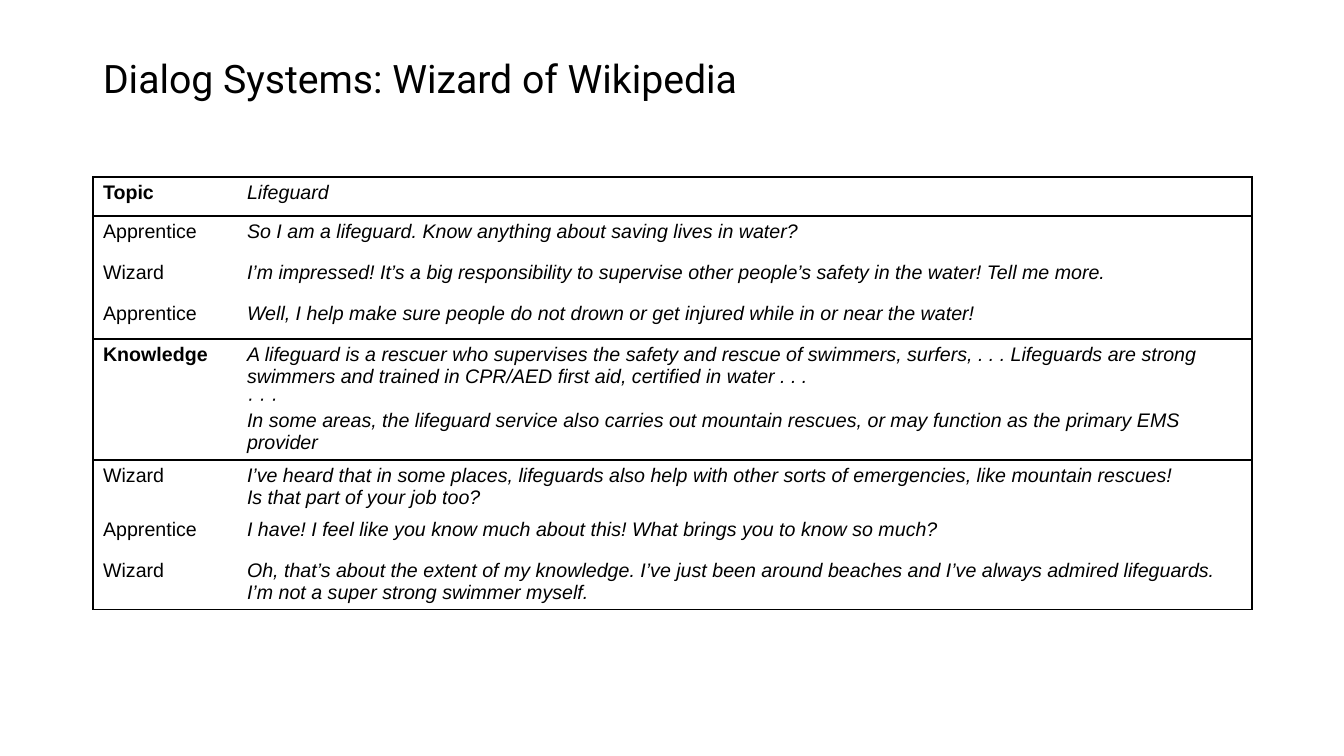
"""Build the Wizard of Wikipedia dialog slide."""
from lxml.etree import SubElement
from pptx import Presentation
from pptx.dml.color import RGBColor
from pptx.enum.text import MSO_ANCHOR, MSO_AUTO_SIZE, PP_ALIGN
from pptx.oxml.ns import qn
from pptx.util import Emu, Pt

INK = "000000"
SECTIONS = [
    [("Topic", ["Lifeguard"], 39)],
    [
        ("Apprentice", ["So I am a lifeguard. Know anything about saving lives in water?"], 41),
        ("Wizard", ["I’m impressed! It’s a big responsibility to supervise other people’s "
                    "safety in the water! Tell me more."], 41),
        ("Apprentice", ["Well, I help make sure people do not drown or get injured while "
                        "in or near the water!"], 41),
    ],
    [("Knowledge", [
        "A lifeguard is a rescuer who supervises the safety and rescue of swimmers, surfers, . . . "
        "Lifeguards are strong swimmers and trained in CPR/AED first aid, certified in water . . .",
        "· · ·",
        "In some areas, the lifeguard service also carries out mountain rescues, "
        "or may function as the primary EMS provider",
    ], 121)],
    [
        ("Wizard", ["I’ve heard that in some places, lifeguards also help with other sorts "
                    "of emergencies, like mountain rescues!",
                    "Is that part of your job too?"], 54),
        ("Apprentice", ["I have! I feel like you know much about this! "
                        "What brings you to know so much?"], 41),
        ("Wizard", ["Oh, that’s about the extent of my knowledge. I’ve just been around beaches "
                    "and I’ve always admired lifeguards. I’m not a super strong swimmer myself."], 54),
    ],
]


def px(length):
    return Emu(round(length * 914400 / 100.8))


def add_span(para, text, font_name, size, bold=False, italic=False):
    span = para.add_run()
    span.text = text
    span.font.name = font_name
    span.font.size = Pt(size)
    span.font.bold = bold
    span.font.italic = italic
    span.font.color.rgb = RGBColor.from_string(INK)


deck = Presentation()
deck.slide_width, deck.slide_height = px(1344), px(756)
page = deck.slides.add_slide(deck.slide_layouts[5])

title = page.shapes.title
title.left, title.top, title.width, title.height = px(93), px(40), px(1159), px(82)
title.text_frame.auto_size = MSO_AUTO_SIZE.NONE
title.text_frame.vertical_anchor = MSO_ANCHOR.MIDDLE
title_para = title.text_frame.paragraphs[0]
title_para.alignment = PP_ALIGN.LEFT
title_para.line_spacing = 0.9
add_span(title_para, "Dialog Systems: Wizard of Wikipedia", "Roboto", 28)

turns = [
    (speaker, lines, height, index == 0, index == len(section) - 1)
    for section in SECTIONS
    for index, (speaker, lines, height) in enumerate(section)
]
table_height = sum(height for _, _, height, _, _ in turns)
dialog = page.shapes.add_table(len(turns), 2, px(93), px(177), px(1159), px(table_height)).table
dialog.first_row = False
dialog.horz_banding = False
dialog.columns[0].width, dialog.columns[1].width = px(144), px(1015)

for row, (speaker, lines, height, opens, closes) in enumerate(turns):
    dialog.rows[row].height = px(height)
    for column, texts in enumerate([[speaker], lines]):
        cell = dialog.cell(row, column)
        for number, text in enumerate(texts):
            frame = cell.text_frame
            para = frame.add_paragraph() if number else frame.paragraphs[0]
            heading = column == 0 and speaker in ("Topic", "Knowledge")
            add_span(para, text, "Arial", 14, bold=heading, italic=column == 1)

        properties = cell._tc.get_or_add_tcPr()
        edges = {"a:lnL": column == 0, "a:lnR": column == 1, "a:lnT": opens, "a:lnB": closes}
        for edge, visible in edges.items():
            border = SubElement(properties, qn(edge), w=str(Pt(1)))
            if visible:
                fill = SubElement(border, qn("a:solidFill"))
                SubElement(fill, qn("a:srgbClr"), val=INK)
            else:
                SubElement(border, qn("a:noFill"))
        cell.fill.background()

deck.save("out.pptx")
